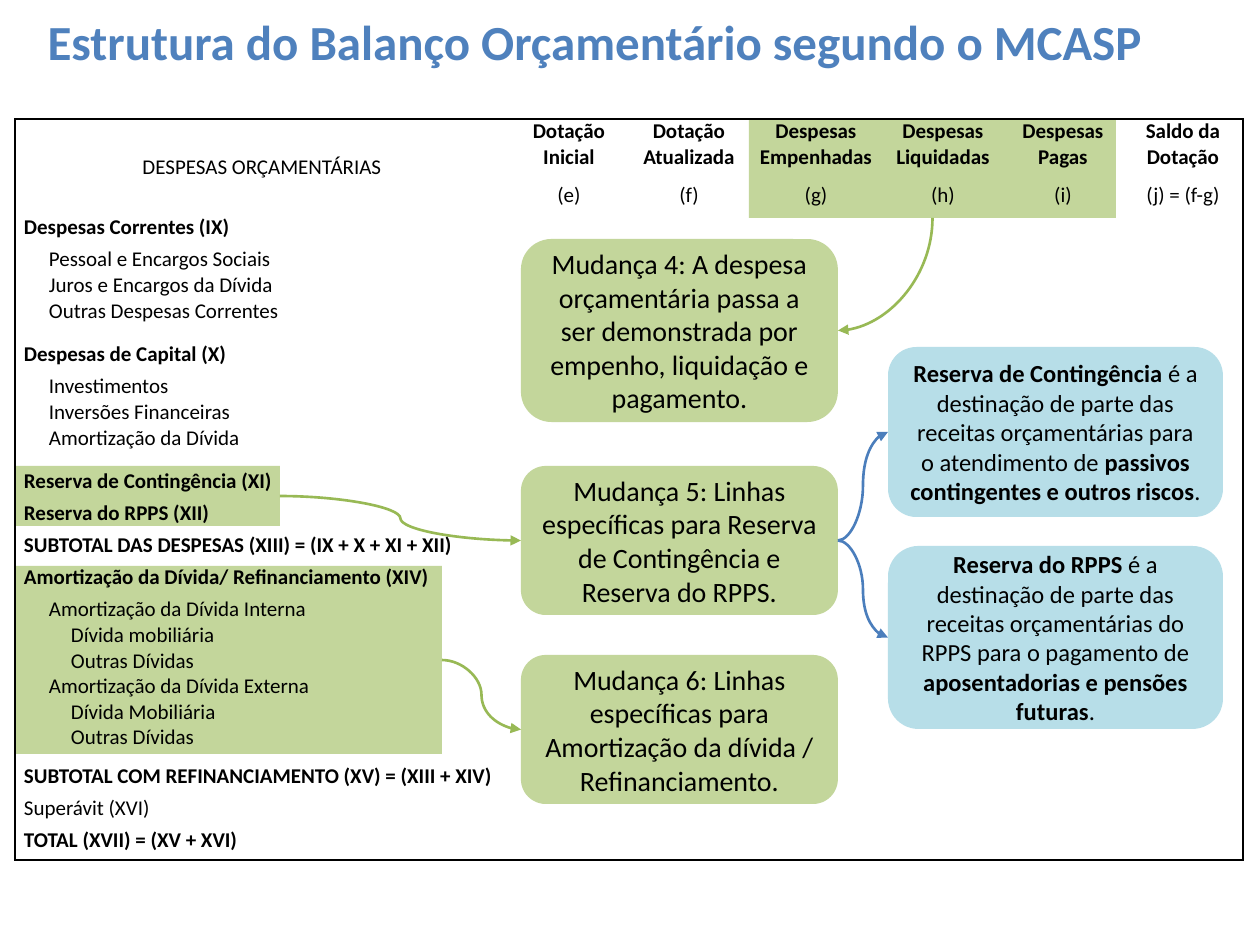
from lxml import etree
from pptx import Presentation
from pptx.dml.color import RGBColor
from pptx.enum.shapes import MSO_CONNECTOR, MSO_SHAPE
from pptx.enum.text import MSO_ANCHOR, PP_ALIGN
from pptx.oxml.ns import qn
from pptx.util import Pt

PX = 914400 // 126
RECT, ROUNDED = MSO_SHAPE.RECTANGLE, MSO_SHAPE.ROUNDED_RECTANGLE
CURVE = MSO_CONNECTOR.CURVE
LEFT, CENTER = PP_ALIGN.LEFT, PP_ALIGN.CENTER
MIDDLE = MSO_ANCHOR.MIDDLE
SIDE_LEFT, SIDE_BOTTOM, SIDE_RIGHT = 1, 2, 3

BLACK = RGBColor(0x00, 0x00, 0x00)
TITLE_BLUE = RGBColor(0x4F, 0x81, 0xBD)
GREEN = RGBColor(0xC3, 0xD6, 0x9B)
AQUA = RGBColor(0xB7, 0xDE, 0xE8)
LINE_GREEN = RGBColor(0x98, 0xB9, 0x55)
LINE_BLUE = RGBColor(0x4B, 0x7E, 0xBC)
NO_STYLE = "{2D5ABB26-0587-4C30-8999-92F81FD0307C}"

COLUMN_WIDTHS = [494, 120, 120, 134, 120, 120, 120]
HEADERS = [
    (["Dotação", "Inicial"], "(e)"),
    (["Dotação", "Atualizada"], "(f)"),
    (["Despesas", "Empenhadas"], "(g)"),
    (["Despesas", "Liquidadas"], "(h)"),
    (["Despesas", "Pagas"], "(i)"),
    (["Saldo da Dotação"], "(j) = (f-g)"),
]
HEADER_HEIGHTS = [64, 32]
ITEM, SUBITEM = 25, 47
EXPENSES = [
    (32, True, [("Despesas Correntes (IX)", 0)]),
    (95, False, [("Pessoal e Encargos Sociais", ITEM),
                 ("Juros e Encargos da Dívida", ITEM),
                 ("Outras Despesas Correntes", ITEM)]),
    (32, True, [("Despesas de Capital (X)", 0)]),
    (95, False, [("Investimentos", ITEM),
                 ("Inversões Financeiras", ITEM),
                 ("Amortização da Dívida", ITEM)]),
    (32, True, [("Reserva de Contingência (XI)", 0)]),
    (32, True, [("Reserva do RPPS (XII)", 0)]),
    (32, True, [("SUBTOTAL DAS DESPESAS (XIII) = (IX + X + XI + XII)", 0)]),
    (32, True, [("Amortização da Dívida/ Refinanciamento (XIV)", 0)]),
    (167, False, [("Amortização da Dívida Interna", ITEM),
                  ("Dívida mobiliária", SUBITEM),
                  ("Outras Dívidas", SUBITEM),
                  ("Amortização da Dívida Externa", ITEM),
                  ("Dívida Mobiliária", SUBITEM),
                  ("Outras Dívidas", SUBITEM)]),
    (32, True, [("SUBTOTAL COM REFINANCIAMENTO (XV) = (XIII + XIV)", 0)]),
    (32, False, [("Superávit (XVI)", 0)]),
    (32, True, [("TOTAL (XVII) = (XV + XVI)", 0)]),
]


def px(*values):
    return [value * PX for value in values]


def write(p, *runs, size=12, bold=False, color=BLACK, align=LEFT, indent=0):
    p.alignment = align
    if indent:
        p._p.get_or_add_pPr().set("marL", str(indent * PX))
    for i, text in enumerate(runs):
        r = p.add_run()
        r.text = text
        r.font.name = "Calibri"
        r.font.size = Pt(size)
        r.font.bold = bold if i % 2 == 0 else not bold
        r.font.color.rgb = color


def write_lines(tf, lines, **style):
    for i, (text, indent) in enumerate(lines):
        p = tf.add_paragraph() if i else tf.paragraphs[0]
        write(p, text, indent=indent, **style)


def add_box(s, box, fill, *runs, kind=RECT, **style):
    sp = s.shapes.add_shape(kind, *px(*box))
    sp.shadow.inherit = False
    sp.fill.solid()
    sp.fill.fore_color.rgb = fill
    sp.line.fill.background()
    if runs:
        sp.text_frame.word_wrap = True
        sp.text_frame.vertical_anchor = MIDDLE
        write(sp.text_frame.paragraphs[0], *runs, align=CENTER, **style)
    return sp


def add_arrow(s, start, start_side, end, end_side, color):
    c = s.shapes.add_connector(CURVE, 0, 0, 0, 0)
    c.begin_connect(start, start_side)
    c.end_connect(end, end_side)
    c.line.color.rgb = color
    c.line.width = Pt(1.5)
    spPr = c._element.spPr
    etree.SubElement(c.line._get_or_add_ln(), qn("a:tailEnd"), type="triangle")
    etree.SubElement(spPr, qn("a:effectLst"))
    return c


def bend_once(c):
    left, top, width, height = c.left, c.top, c.width, c.height
    c.left = left + (width - height) // 2
    c.top = top + (height - width) // 2
    c.width, c.height = height, width
    spPr = c._element.spPr
    spPr.find(qn("a:prstGeom")).set("prst", "curvedConnector2")
    xfrm = spPr.find(qn("a:xfrm"))
    xfrm.attrib.pop("flipH", None)
    xfrm.set("rot", "5400000")


def add_border(cell, side):
    ln = etree.SubElement(cell._tc.get_or_add_tcPr(), qn("a:ln" + side), w=str(Pt(1)))
    fill = etree.SubElement(ln, qn("a:solidFill"))
    etree.SubElement(fill, qn("a:srgbClr"), val=str(BLACK))


def format_cells(table):
    last_row, last_col = len(table.rows) - 1, len(table.columns) - 1
    for i, row in enumerate(table.rows):
        for j, cell in enumerate(row.cells):
            cell.margin_left = cell.margin_right = 9 * PX
            cell.margin_top = cell.margin_bottom = 0
            edges = [("L", j == 0), ("R", j == last_col),
                     ("T", i == 0), ("B", i == last_row)]
            for side, outer in edges:
                if outer:
                    add_border(cell, side)
            cell.fill.background()
            if not cell.text_frame.text:
                p = cell.text_frame.paragraphs[0]
                etree.SubElement(p._p, qn("a:endParaRPr"), sz="1200")


def add_budget_table(s):
    heights = HEADER_HEIGHTS + [height for height, _, _ in EXPENSES]
    frame = s.shapes.add_table(len(heights), len(COLUMN_WIDTHS),
                               *px(15, 119, sum(COLUMN_WIDTHS), sum(heights)))
    table = frame.table
    table.first_row = table.horz_banding = False
    table._tbl.tblPr.find(qn("a:tableStyleId")).text = NO_STYLE
    for column, width in zip(table.columns, COLUMN_WIDTHS):
        column.width = width * PX
    for row, height in zip(table.rows, heights):
        row.height = height * PX

    corner = table.cell(0, 0)
    corner.merge(table.cell(1, 0))
    corner.vertical_anchor = MIDDLE
    write(corner.text_frame.paragraphs[0], "DESPESAS ORÇAMENTÁRIAS", align=CENTER)
    for j, (names, code) in enumerate(HEADERS, 1):
        write_lines(table.cell(0, j).text_frame, [(name, 0) for name in names],
                    bold=True, align=CENTER)
        write(table.cell(1, j).text_frame.paragraphs[0], code, align=CENTER)
    for i, (_, bold, lines) in enumerate(EXPENSES, len(HEADER_HEIGHTS)):
        write_lines(table.cell(i, 0).text_frame, lines, bold=bold)
    format_cells(table)


def add_title(s, text):
    title = s.shapes.title
    title.left, title.top, title.width, title.height = px(35, -4, 1134, 89)
    title.text_frame.vertical_anchor = MIDDLE
    write(title.text_frame.paragraphs[0], text, size=28, bold=True, color=TITLE_BLUE)


def add_change(s, top, height, text):
    return add_box(s, (521, top, 317, height), GREEN, text, kind=ROUNDED, size=16)


def add_definition(s, top, height, *runs):
    return add_box(s, (888, top, 335, height), AQUA, *runs,
                   kind=ROUNDED, size=14, bold=True)


def main():
    prs = Presentation()
    prs.slide_width, prs.slide_height = px(1260, 945)
    s = prs.slides.add_slide(prs.slide_layouts[5])
    add_title(s, "Estrutura do Balanço Orçamentário segundo o MCASP")

    stages = add_box(s, (749, 119, 367, 99), GREEN)
    reserves = add_box(s, (16, 466, 264, 60), GREEN)
    refinancing = add_box(s, (16, 566, 426, 188), GREEN)
    change4 = add_change(s, 239, 183, "Mudança 4: A despesa orçamentária passa a ser "
                         "demonstrada por empenho, liquidação e pagamento.")
    change5 = add_change(s, 466, 149, "Mudança 5: Linhas específicas para Reserva de "
                         "Contingência e Reserva do RPPS.")
    change6 = add_change(s, 655, 149, "Mudança 6: Linhas específicas para Amortização "
                         "da dívida / Refinanciamento.")
    contingency = add_definition(
        s, 347, 170, "Reserva de Contingência ",
        "é a destinação de parte das receitas orçamentárias para o atendimento de ",
        "passivos contingentes e outros riscos", ".")
    pension = add_definition(
        s, 546, 183, "Reserva do RPPS ",
        "é a destinação de parte das receitas orçamentárias do RPPS para o pagamento de ",
        "aposentadorias e pensões futuras", ".")

    bend_once(add_arrow(s, stages, SIDE_BOTTOM, change4, SIDE_RIGHT, LINE_GREEN))
    for start, end, color in [(reserves, change5, LINE_GREEN),
                              (refinancing, change6, LINE_GREEN),
                              (change5, contingency, LINE_BLUE),
                              (change5, pension, LINE_BLUE)]:
        add_arrow(s, start, SIDE_RIGHT, end, SIDE_LEFT, color)
    add_budget_table(s)
    prs.save("out.pptx")


if __name__ == "__main__":
    main()
